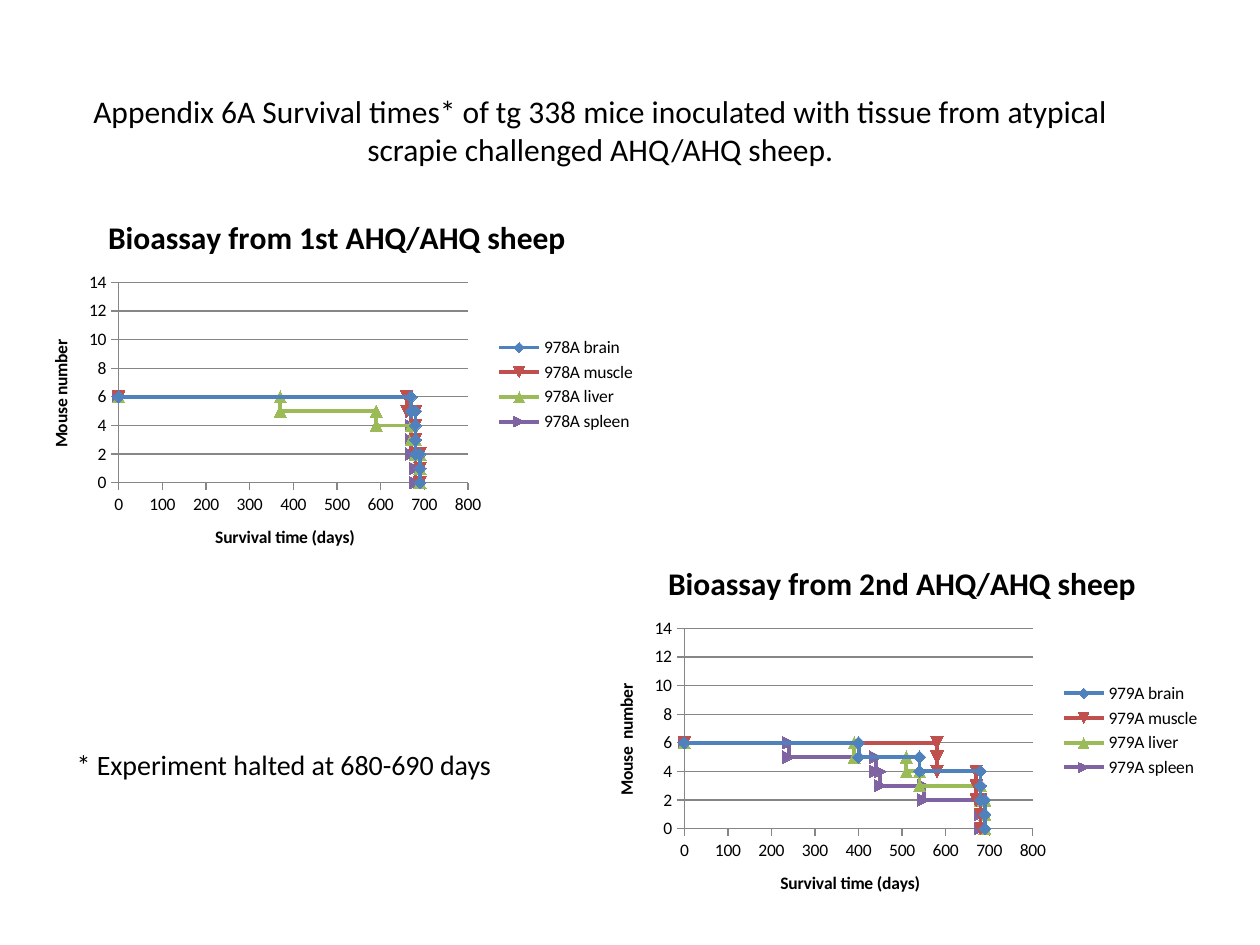
from lxml import etree
from pptx import Presentation
from pptx.chart.data import XyChartData
from pptx.dml.color import RGBColor
from pptx.enum.chart import XL_CHART_TYPE, XL_LEGEND_POSITION, XL_MARKER_STYLE, XL_TICK_MARK
from pptx.enum.text import MSO_AUTO_SIZE, PP_ALIGN
from pptx.oxml.ns import qn
from pptx.util import Inches, Pt

SCATTER_LINES = XL_CHART_TYPE.XY_SCATTER_LINES
LEGEND_RIGHT = XL_LEGEND_POSITION.RIGHT
TICK_OUTSIDE = XL_TICK_MARK.OUTSIDE
TICK_NONE = XL_TICK_MARK.NONE
FIT_SHAPE = MSO_AUTO_SIZE.SHAPE_TO_FIT_TEXT
LEFT, CENTER = PP_ALIGN.LEFT, PP_ALIGN.CENTER

BLACK = RGBColor(0x00, 0x00, 0x00)
GRAY = RGBColor(0x86, 0x86, 0x86)
BLUE = RGBColor(0x4F, 0x81, 0xBD)
RED = RGBColor(0xC0, 0x50, 0x4D)
GREEN = RGBColor(0x9B, 0xBB, 0x59)
PURPLE = RGBColor(0x80, 0x64, 0xA2)

FONT = "Calibri"
SLIDE_WIDTH, SLIDE_HEIGHT = Inches(10), Inches(7.5)
PLOT_AREA = {"x": 0.15, "y": 0.23, "w": 0.56, "h": 0.53}

SERIES_STYLES = [
    (BLUE, XL_MARKER_STYLE.DIAMOND),
    (RED, XL_MARKER_STYLE.AUTOMATIC),
    (GREEN, XL_MARKER_STYLE.TRIANGLE),
    (PURPLE, XL_MARKER_STYLE.DOT),
]
SURVIVORS = [6, 6, 5, 5, 4, 4, 3, 3, 2, 2, 1, 1, 0]
FIRST_SHEEP = {
    "978A brain": [0, 670, 670, 680, 680, 680, 680, 680, 680, 690, 690, 690, 690],
    "978A muscle": [0, 660, 660, 680, 680, 680, 680, 680, 680, 690, 690, 690, 690],
    "978A liver": [0, 370, 370, 590, 590, 670, 670, 680, 680, 690, 690, 690, 690],
    "978A spleen": [0, 670, 670, 670, 670, 670, 670, 670, 670, 680, 680, 680, 680],
}
SECOND_SHEEP = {
    "979A brain": [0, 400, 400, 540, 540, 680, 680, 680, 680, 690, 690, 690, 690],
    "979A muscle": [0, 580, 580, 580, 580, 670, 670, 670, 670, 680, 680, 680, 680],
    "979A liver": [0, 390, 390, 510, 510, 540, 540, 680, 680, 690, 690, 690, 690],
    "979A spleen": [0, 240, 240, 440, 440, 450, 450, 550, 550, 680, 680, 680, 680],
}


def place(left, top, width, height):
    return (int(left * SLIDE_WIDTH), int(top * SLIDE_HEIGHT),
            int(width * SLIDE_WIDTH), int(height * SLIDE_HEIGHT))


def style_font(font, size, bold=False):
    font.name = FONT
    font.size = Pt(size)
    font.bold = bold
    font.color.rgb = BLACK


def add_text(slide, text, box, size, alignment):
    text_frame = slide.shapes.add_textbox(*place(*box)).text_frame
    text_frame.word_wrap = True
    text_frame.auto_size = FIT_SHAPE
    text_frame.text = text
    paragraph = text_frame.paragraphs[0]
    paragraph.alignment = alignment
    style_font(paragraph.runs[0].font, size)


def set_title(owner, text, size):
    owner.has_title = True
    text_frame = (owner.chart_title if hasattr(owner, "chart_title")
                  else owner.axis_title).text_frame
    text_frame.text = text
    style_font(text_frame.paragraphs[0].runs[0].font, size, bold=True)


def style_axis(axis, title, maximum, step, gridlines):
    set_title(axis, title, 10)
    axis.minimum_scale = 0
    axis.maximum_scale = maximum
    axis.major_unit = step
    axis.major_tick_mark = TICK_OUTSIDE
    axis.minor_tick_mark = TICK_NONE
    axis.has_major_gridlines = gridlines
    lines = [axis.format.line]
    if gridlines:
        lines.append(axis.major_gridlines.format.line)
    for line in lines:
        line.color.rgb = GRAY
        line.width = Pt(0.75)
    style_font(axis.tick_labels.font, 10)


def style_series(series, color, marker_style):
    series.smooth = False
    series.format.line.color.rgb = color
    series.format.line.width = Pt(2.25)
    marker = series.marker
    marker.style = marker_style
    marker.size = 7
    marker.format.fill.solid()
    marker.format.fill.fore_color.rgb = color
    marker.format.line.color.rgb = color


def set_plot_area(chart):
    plot_area = chart.element.find(".//" + qn("c:plotArea"))
    layout = plot_area.find(qn("c:layout"))
    if layout is None:
        layout = etree.Element(qn("c:layout"))
        plot_area.insert(0, layout)
    manual = etree.SubElement(layout, qn("c:manualLayout"))
    settings = {"layoutTarget": "inner", "xMode": "edge", "yMode": "edge", **PLOT_AREA}
    for name, value in settings.items():
        etree.SubElement(manual, qn("c:" + name)).set("val", str(value))


def add_survival_chart(slide, title, value_title, survival_times, box):
    data = XyChartData()
    for name, days in survival_times.items():
        series = data.add_series(name)
        for day, survivors in zip(days, SURVIVORS):
            series.add_data_point(day, survivors)
    chart = slide.shapes.add_chart(SCATTER_LINES, *place(*box), data).chart
    style_font(chart.font, 10)
    set_title(chart, title, 18)
    chart.has_legend = True
    chart.legend.position = LEGEND_RIGHT
    chart.legend.include_in_layout = False
    style_font(chart.legend.font, 10)
    style_axis(chart.category_axis, "Survival time (days)", 800, 100, False)
    style_axis(chart.value_axis, value_title, 14, 2, True)
    plot = chart.plots[0]
    plot.vary_by_categories = False
    for series, (color, marker_style) in zip(plot.series, SERIES_STYLES):
        style_series(series, color, marker_style)
    set_plot_area(chart)


def main():
    presentation = Presentation()
    presentation.slide_width = SLIDE_WIDTH
    presentation.slide_height = SLIDE_HEIGHT
    slide = presentation.slides.add_slide(presentation.slide_layouts[6])
    add_survival_chart(slide, "Bioassay from 1st AHQ/AHQ sheep", "Mouse number",
                       FIRST_SHEEP, (0.02, 0.207, 0.495, 0.4))
    add_survival_chart(slide, "Bioassay from 2nd AHQ/AHQ sheep", "Mouse  number",
                       SECOND_SHEEP, (0.469, 0.573, 0.494, 0.4))
    add_text(slide, "Appendix 6A Survival times* of tg 338 mice inoculated with tissue "
             "from atypical scrapie challenged AHQ/AHQ sheep.",
             (0.059, 0.091, 0.835, 0.095), 18, CENTER)
    add_text(slide, "* Experiment halted at 680-690 days",
             (0.051, 0.784, 0.37, 0.049), 16, LEFT)
    presentation.save("out.pptx")


if __name__ == "__main__":
    main()
